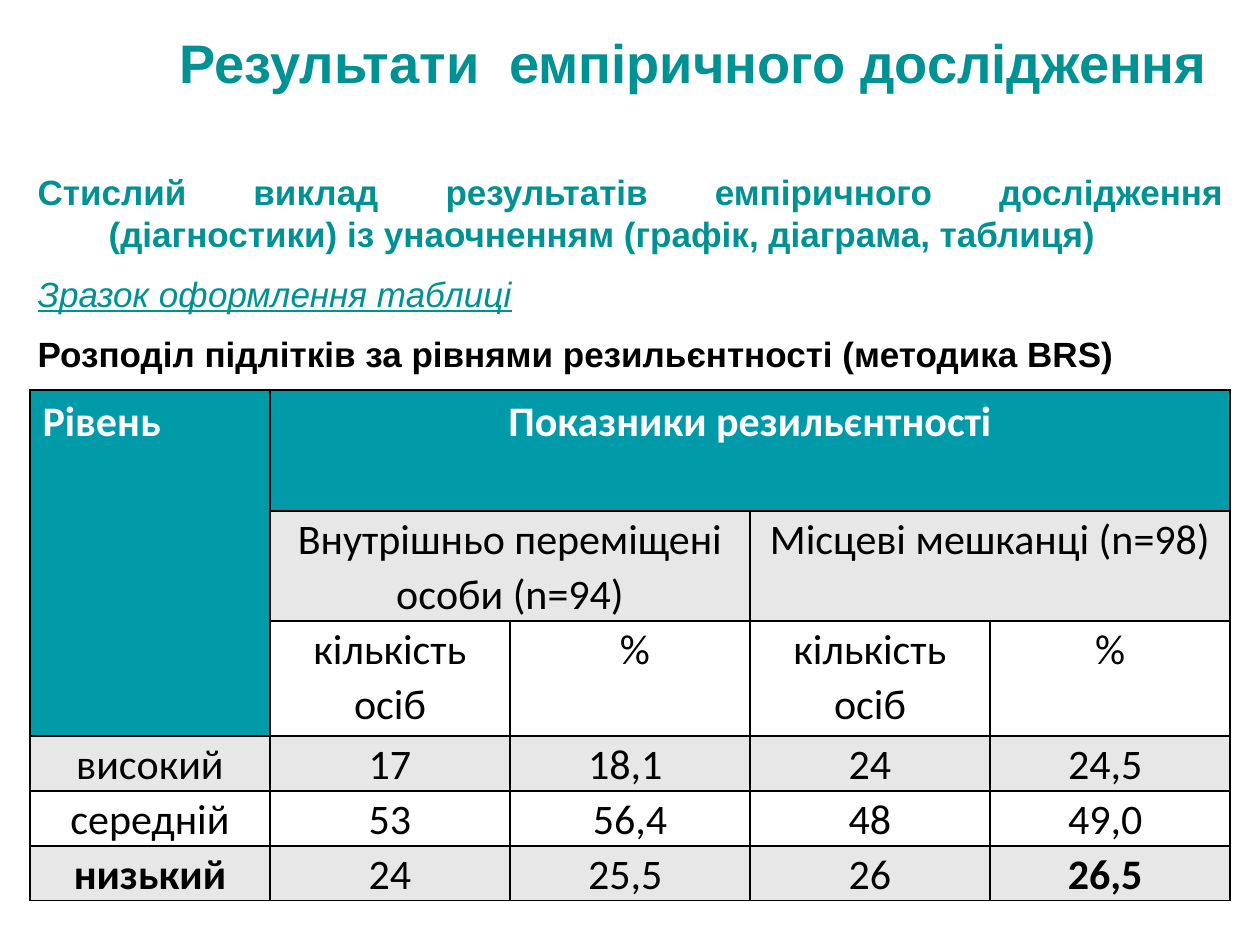
from lxml.etree import SubElement
from pptx import Presentation
from pptx.dml.color import RGBColor as Rgb
from pptx.enum.text import MSO_ANCHOR as Anchor, MSO_AUTO_SIZE as Fit, PP_ALIGN as Align
from pptx.oxml import parse_xml
from pptx.oxml.ns import nsdecls, qn
from pptx.util import Emu, Pt

PX_PER_INCH = 126
COLORS = {"teal": "009193", "header": "019AA8", "band": "E7E7E7",
          "white": "FFFFFF", "black": "000000"}

TITLE = "Результати  емпіричного дослідження "
INTRO = [
    ("Стислий виклад результатів емпіричного дослідження (діагностики) "
     "із унаочненням (графік, діаграма, таблиця)", Align.JUSTIFY, 71, "teal", {"bold": True}),
    ("Зразок оформлення таблиці", Align.LEFT, 47, "teal",
     {"bold": False, "italic": True, "underline": True}),
    ("Розподіл підлітків за рівнями резильєнтності (методика BRS)", Align.LEFT, 47, "black",
     {"bold": True}),
]
LEVELS = [
    ["Рівень", "Показники резильєнтності", None, None, None],
    [None, "Внутрішньо переміщені особи (n=94)", None, "Місцеві мешканці (n=98)", None],
    [None, "кількість осіб", " %", "кількість осіб", "%"],
    ["високий", "17", "18,1 ", "24", "24,5 "],
    ["середній", "53", "56,4", "48", "49,0 "],
    ["низький", "24", "25,5 ", "26", "26,5 "],
]
ROW_HEIGHTS = [121, 110, 115, 55, 55, 54]
MERGES = [((0, 0), (2, 0)), ((0, 1), (0, 4)), ((1, 1), (1, 2)), ((1, 3), (1, 4))]
STRESSED = {(5, 0), (5, 4)}


def px(length):
    """Turn px into EMU."""
    return Emu(round(length * 914400 / PX_PER_INCH))


def apply(target, values):
    """Set each named attribute of the target."""
    for name, value in values.items():
        setattr(target, name, value)


def place(region, box):
    """Move a placeholder to its box."""
    apply(region, dict(zip(("left", "top", "width", "height"), map(px, box))))


def style(paragraph, font_name, size, color, **values):
    """Format the font of every run in a paragraph."""
    for run in paragraph.runs:
        apply(run.font, {"name": font_name, "size": Pt(size), **values})
        run.font.color.rgb = Rgb.from_string(COLORS[color])


def fill_title(title, box):
    """Write the heading into the title placeholder."""
    place(title, box)
    frame = title.text_frame
    frame.text = TITLE
    apply(frame, {"auto_size": Fit.NONE, "vertical_anchor": Anchor.BOTTOM, "word_wrap": True})
    heading = frame.paragraphs[0]
    heading.alignment = Align.CENTER
    style(heading, "Arial", 31, "teal", bold=True)


def fill_intro(body, box):
    """Write the introduction into the body placeholder with hanging indents."""
    place(body, box)
    frame = body.text_frame
    frame.text = "\n".join(entry[0] for entry in INTRO)
    apply(frame, {"auto_size": Fit.NONE, "vertical_anchor": Anchor.MIDDLE, "word_wrap": True})
    for order, (line, entry) in enumerate(zip(frame.paragraphs, INTRO)):
        _, alignment, hang, color, emphasis = entry
        apply(line, {"alignment": alignment, "space_before": Pt(4 if order else 0),
                     "space_after": Pt(6)})
        properties = line._p.get_or_add_pPr()
        properties.set("marL", str(px(hang)))
        properties.set("indent", str(-px(hang)))
        SubElement(properties, qn("a:buNone"))
        style(line, "Arial", 20, color, **emphasis)


def outline(cell):
    """Draw a thin black border on all sides of a cell."""
    properties = cell._tc.get_or_add_tcPr()
    for order, side in enumerate(("lnL", "lnR", "lnT", "lnB")):
        properties.insert(order, parse_xml(
            f'<a:{side} {nsdecls("a")} w="12700"><a:solidFill>'
            f'<a:srgbClr val="{COLORS["black"]}"/></a:solidFill></a:{side}>'))


def fill_cell(cell, words, row, column):
    """Colour, border and label one cell by its place in the table."""
    is_header = row == 0 or (column == 0 and row < 3)
    cell.fill.solid()
    cell.fill.fore_color.rgb = Rgb.from_string(
        COLORS["header" if is_header else "band" if row % 2 else "white"])
    outline(cell)
    if not is_header:
        apply(cell, {"margin_left": px(9), "margin_right": px(9),
                     "margin_top": 0, "margin_bottom": 0})
    if words is None:
        return
    cell.text = words
    label = cell.text_frame.paragraphs[0]
    label.alignment = Align.LEFT if (row, column) == (0, 0) else Align.CENTER
    if not is_header:
        label.line_spacing = 1.07
    style(label, "Calibri", 24, "white" if is_header else "black",
          bold=is_header or (row, column) in STRESSED)


def add_levels(slide, box):
    """Build the table of resilience levels."""
    table = slide.shapes.add_table(len(LEVELS), len(LEVELS[0]), *map(px, box)).table
    apply(table, {"first_row": False, "horz_banding": False})
    for table_row, height in zip(table.rows, ROW_HEIGHTS):
        table_row.height = px(height)
    for start, end in MERGES:
        table.cell(*start).merge(table.cell(*end))
    for row, entries in enumerate(LEVELS):
        for column, words in enumerate(entries):
            fill_cell(table.cell(row, column), words, row, column)


def main():
    """Build the slide and save it."""
    deck = Presentation()
    apply(deck, {"slide_width": px(1260), "slide_height": px(945)})
    slide = deck.slides.add_slide(deck.slide_layouts[1])
    fill_title(slide.shapes.title, (163, 18, 1075, 83))
    fill_intro(slide.placeholders[1], (25, 113, 1211, 319))
    add_levels(slide, (30, 390, 1200, sum(ROW_HEIGHTS)))
    deck.save("out.pptx")


if __name__ == "__main__":
    main()
